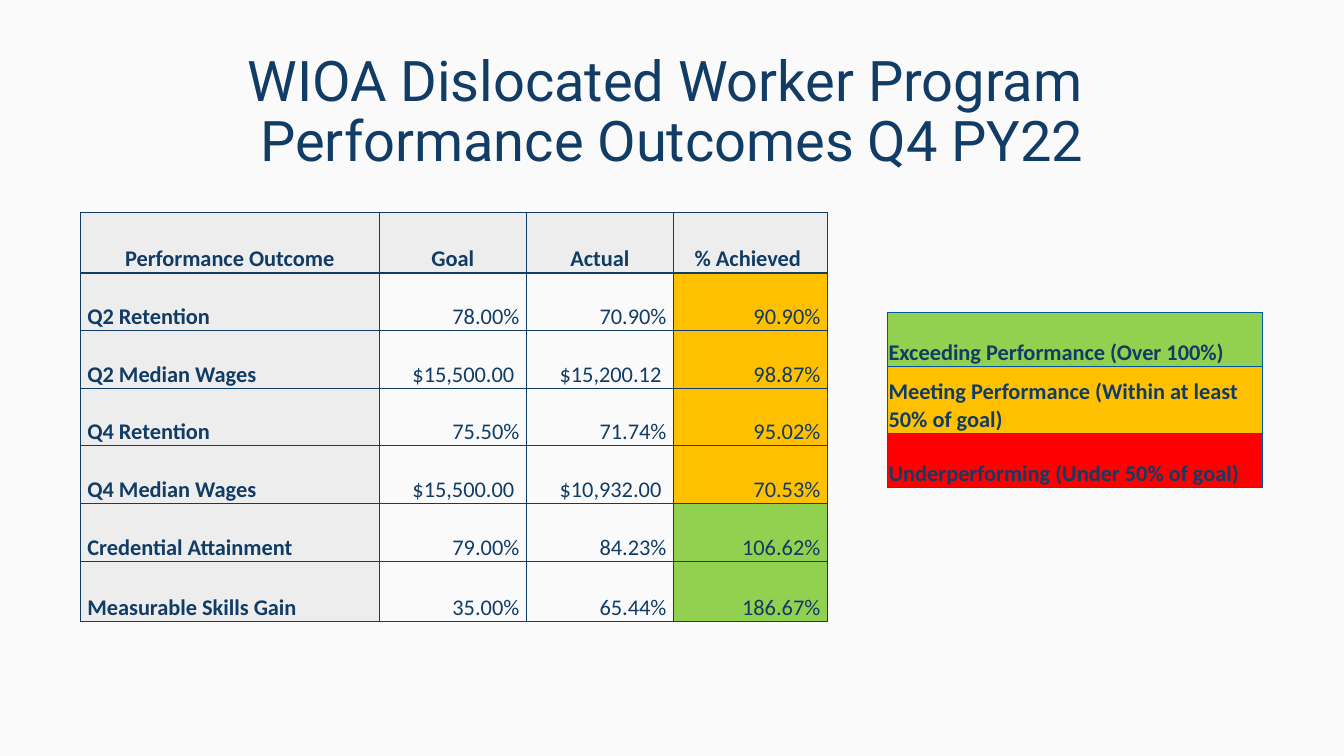
from dataclasses import dataclass

from lxml import etree
from pptx import Presentation
from pptx.dml.color import RGBColor
from pptx.enum import text as t
from pptx.oxml import ns
from pptx.util import Pt


@dataclass(frozen=True)
class Theme:
    paper: str = "FAFAFA"
    navy: str = "113C66"
    blue: str = "0058A3"
    label: str = "EDEDED"
    exceeding: str = "92D050"
    meeting: str = "FFC000"
    under: str = "FF0000"
    title_font: str = "Roboto"
    body_font: str = "Calibri"
    title_size: int = 40
    body_size: int = 16


TH = Theme()
LEFT, CENTER, RIGHT = t.PP_ALIGN.LEFT, t.PP_ALIGN.CENTER, t.PP_ALIGN.RIGHT

HEADERS = ["Performance Outcome", "Goal", "Actual", "% Achieved "]
OUTCOMES = [
    ("Q2 Retention", "78.00%", "70.90%", "90.90%"),
    ("Q2 Median Wages", "$15,500.00 ", "$15,200.12 ", "98.87%"),
    ("Q4 Retention", "75.50%", "71.74%", "95.02%"),
    ("Q4 Median Wages", "$15,500.00 ", "$10,932.00 ", "70.53%"),
    ("Credential Attainment", "79.00%", "84.23%", "106.62%"),
    ("Measurable Skills Gain", "35.00%", "65.44%", "186.67%"),
]
LEGEND = [
    ("Exceeding Performance (Over 100%)", TH.exceeding),
    ("Meeting Performance (Within at least 50% of goal)", TH.meeting),
    ("Underperforming (Under 50% of goal)", TH.under),
]


def write(tf, lines, *, font=TH.body_font, size=TH.body_size, color=TH.navy,
          bold=False, align=LEFT, spacing=None):
    """Write lines as one paragraph, with line breaks between them."""
    p = tf.paragraphs[0]
    p.alignment = align
    if spacing:
        p.line_spacing = spacing
    for i, line in enumerate(lines):
        if i:
            p.add_line_break()
        r = p.add_run()
        r.text = line
        r.font.name, r.font.size, r.font.bold = font, Pt(size), bold
        r.font.color.rgb = RGBColor.from_string(color)


def add_borders(cell, color, width=1):
    tcPr = cell._tc.get_or_add_tcPr()
    for side in ("a:lnL", "a:lnR", "a:lnT", "a:lnB"):
        ln = etree.SubElement(tcPr, ns.qn(side), w=str(Pt(width)))
        fill = etree.SubElement(ln, ns.qn("a:solidFill"))
        etree.SubElement(fill, ns.qn("a:srgbClr"), val=color)


def add_grid(s, left, top, cols, rows):
    """Add a plain table with the given column widths and row heights."""
    table = s.shapes.add_table(len(rows), len(cols), Pt(left), Pt(top),
                               Pt(sum(cols)), Pt(sum(rows))).table
    table.first_row = table.horz_banding = False
    for col, width in zip(table.columns, cols):
        col.width = Pt(width)
    for row, height in zip(table.rows, rows):
        row.height = Pt(height)
    return table


def fill_cell(cell, text, *, fill, border, margins, **fmt):
    add_borders(cell, border)
    cell.fill.solid()
    cell.fill.fore_color.rgb = RGBColor.from_string(fill)
    cell.vertical_anchor = t.MSO_ANCHOR.BOTTOM
    side, top = margins
    cell.margin_left = cell.margin_right = Pt(side)
    cell.margin_top, cell.margin_bottom = Pt(top), 0
    write(cell.text_frame, [text], **fmt)


def rating(achieved):
    value = float(achieved.rstrip("%"))
    if value > 100:
        return TH.exceeding
    return TH.meeting if value >= 50 else TH.under


def add_title(s, left, top, width, height):
    sp = s.shapes.title
    sp.left, sp.top, sp.width, sp.height = map(Pt, (left, top, width, height))
    tf = sp.text_frame
    tf.word_wrap, tf.auto_size = True, t.MSO_AUTO_SIZE.NONE
    tf.vertical_anchor = t.MSO_ANCHOR.MIDDLE
    write(tf, ["WIOA Dislocated Worker Program ", "Performance Outcomes Q4 PY22"],
          font=TH.title_font, size=TH.title_size, align=CENTER, spacing=0.9)


def add_outcomes(s, left, top, width, height):
    # Label column takes 40%; the first and last rows are slightly taller
    label_w, number_w = width * 0.4, width * 0.197
    cols = [label_w, number_w, number_w, width - label_w - 2 * number_w]
    edge = 43.2
    inner = (height - 2 * edge) / (len(OUTCOMES) - 1)
    rows = [edge] + [inner] * (len(OUTCOMES) - 1) + [edge]
    table = add_grid(s, left, top, cols, rows)
    for i, record in enumerate([HEADERS, *OUTCOMES]):
        for j, text in enumerate(record):
            heading = i == 0 or j == 0
            if heading:
                fill = TH.label
            else:
                fill = rating(text) if j == 3 else TH.paper
            align = CENTER if i == 0 else LEFT if j == 0 else RIGHT
            fill_cell(table.cell(i, j), text, fill=fill, border=TH.navy,
                      margins=(5, 0), bold=heading, align=align)


def add_legend(s, left, top, width, height):
    # The middle entry wraps to two lines
    middle = 48
    edge = (height - middle) / 2
    table = add_grid(s, left, top, [width], [edge, middle, edge])
    for i, (text, fill) in enumerate(LEGEND):
        fill_cell(table.cell(i, 0), text, fill=fill, border=TH.blue,
                  margins=(0.75, 0.75), bold=True)


def main():
    prs = Presentation()
    prs.slide_width, prs.slide_height = Pt(960), Pt(540)
    s = prs.slides.add_slide(prs.slide_layouts[5])
    s.background.fill.solid()
    s.background.fill.fore_color.rgb = RGBColor.from_string(TH.paper)

    add_title(s, 66, 28.8, 828, 104.4)
    add_outcomes(s, 57.4, 151.8, 533.6, 292.2)
    add_legend(s, 634, 223.2, 268, 124.8)
    prs.save("out.pptx")


if __name__ == "__main__":
    main()
